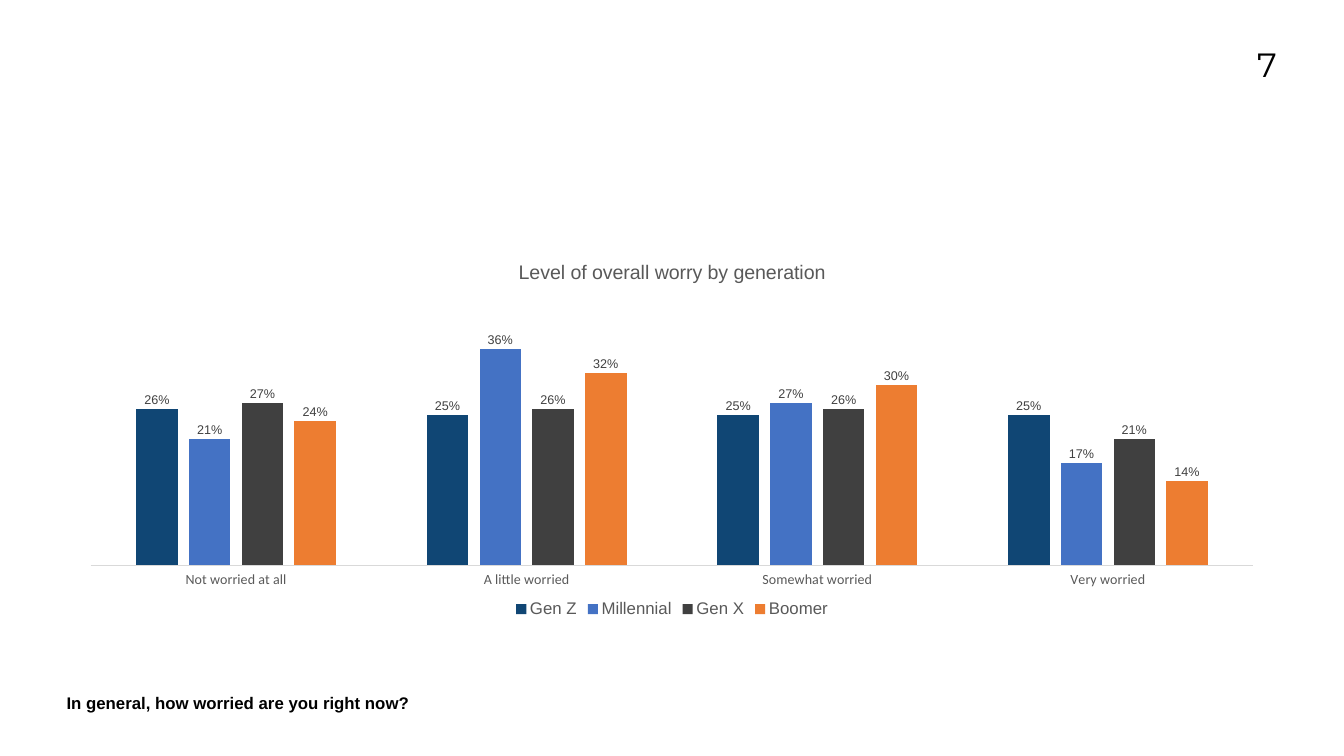
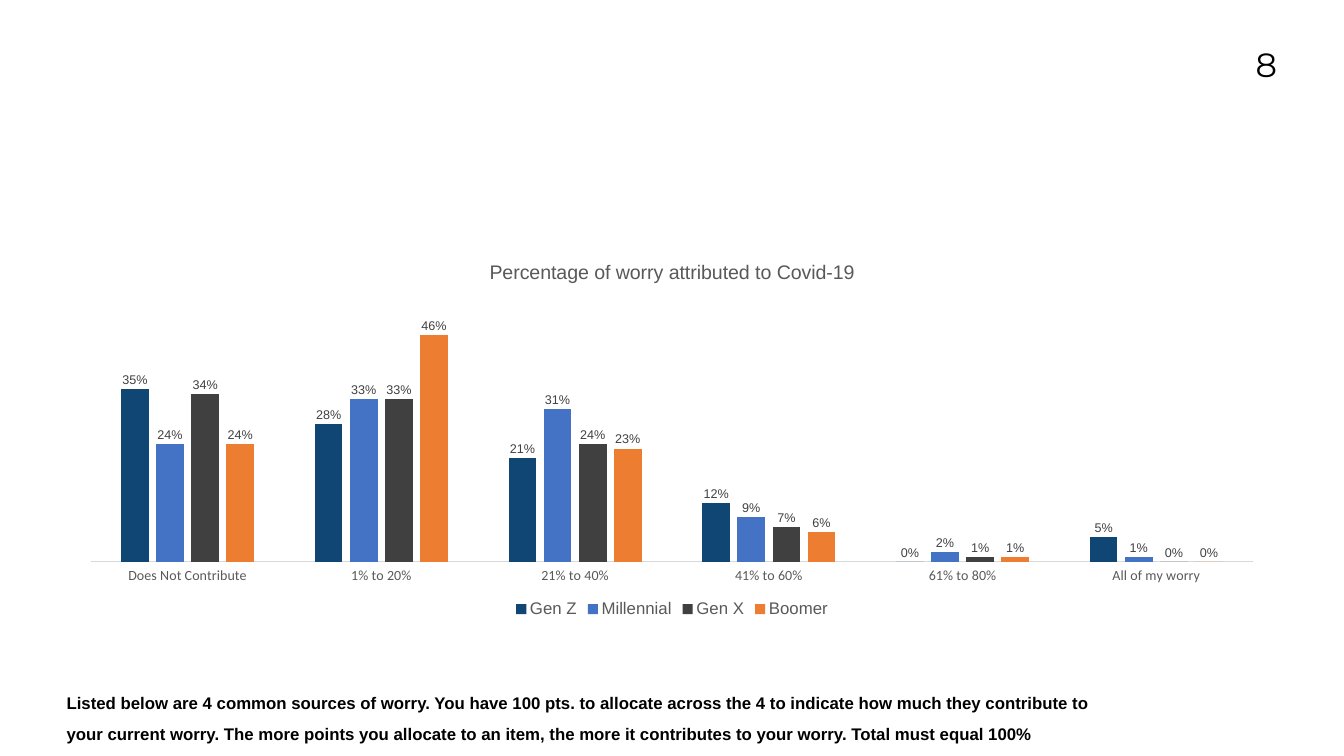
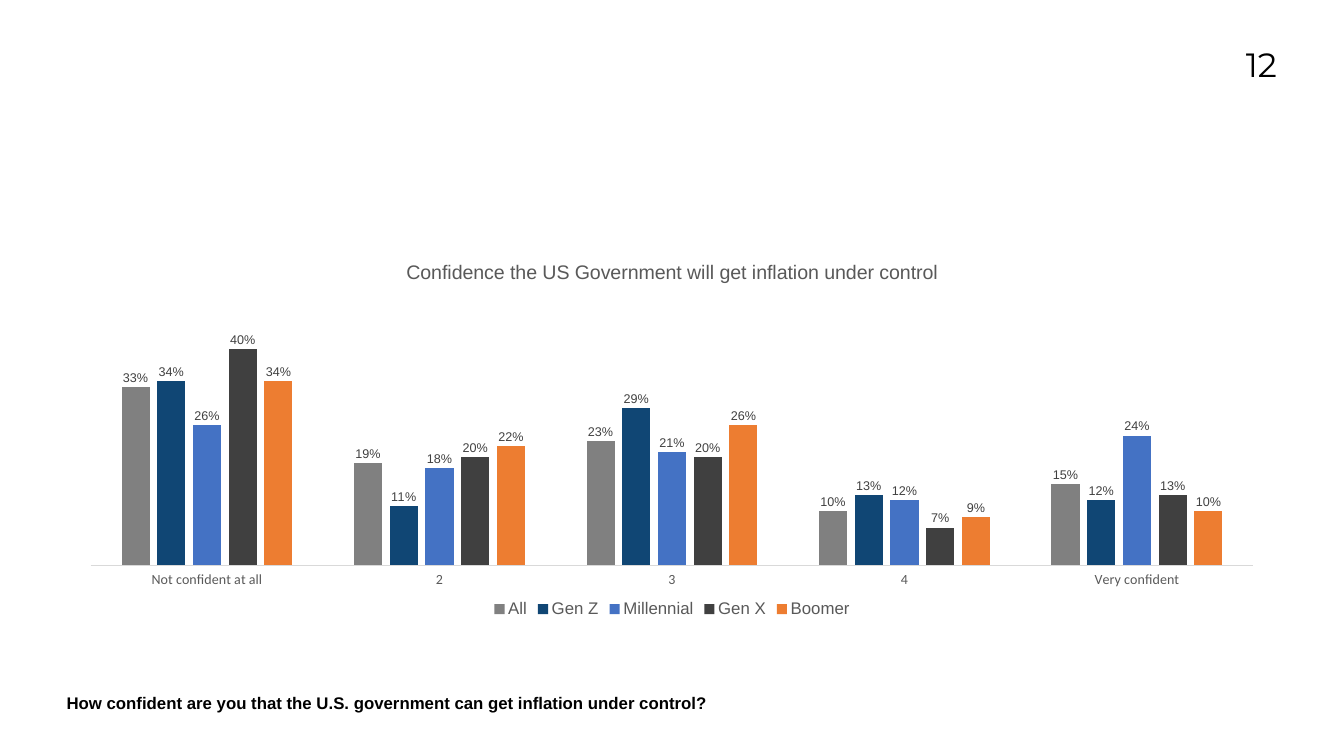
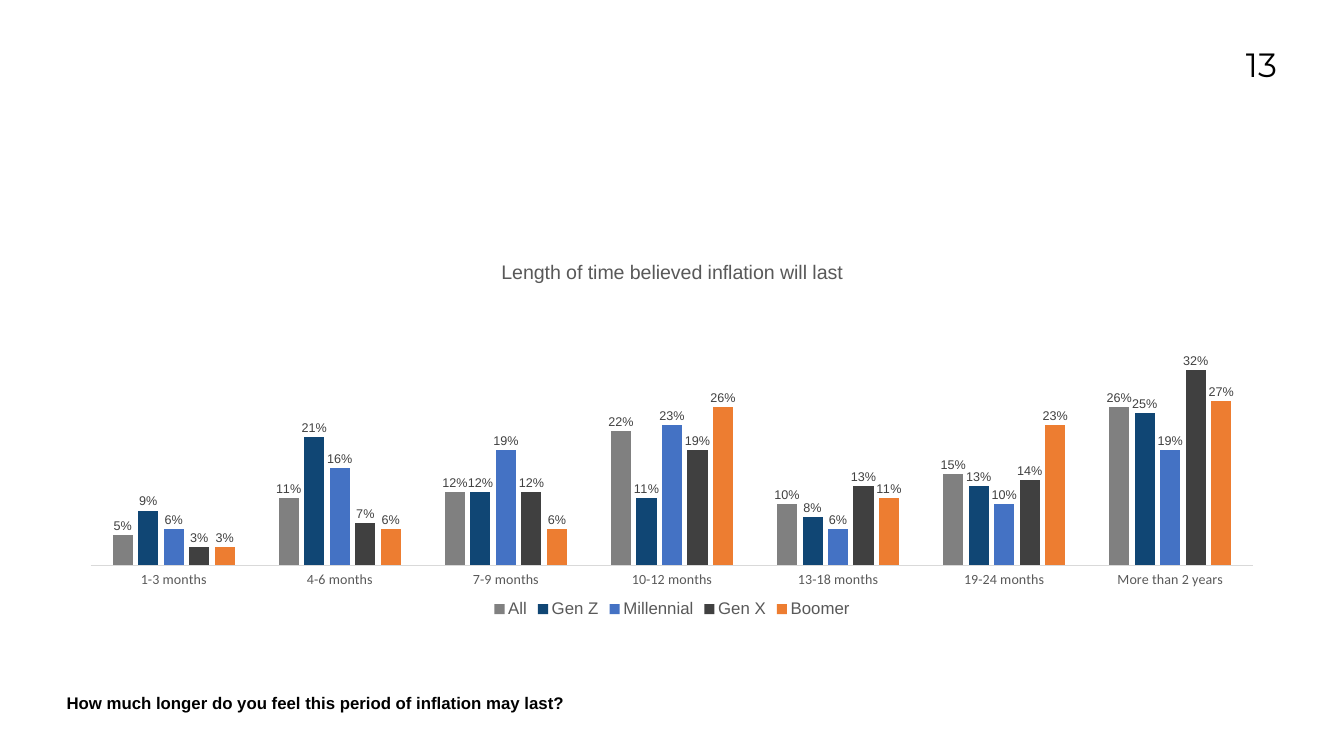
from lxml import etree
from pptx import Presentation
from pptx.chart.data import CategoryChartData
from pptx.dml.color import RGBColor
from pptx.enum.chart import (XL_CHART_TYPE, XL_LABEL_POSITION, XL_LEGEND_POSITION,
                             XL_TICK_LABEL_POSITION, XL_TICK_MARK)
from pptx.enum.text import PP_ALIGN
from pptx.oxml.ns import qn
from pptx.util import Inches, Pt

# Shared colours
BLACK = RGBColor(0x00, 0x00, 0x00)
CHART_TEXT = RGBColor(0x59, 0x59, 0x59)
LABEL_TEXT = RGBColor(0x40, 0x40, 0x40)
AXIS_LINE = RGBColor(0xD9, 0xD9, 0xD9)
GENERATION_COLORS = {
    "All": RGBColor(0x80, 0x80, 0x80),
    "Gen Z": RGBColor(0x10, 0x46, 0x74),
    "Millennial": RGBColor(0x44, 0x72, 0xC4),
    "Gen X": RGBColor(0x40, 0x40, 0x40),
    "Boomer": RGBColor(0xED, 0x7D, 0x31),
}

# Slide content; percentages are whole numbers, plot is (top, height) within the chart
SLIDES = [
    {
        "number": "7",
        "title": "Level of overall worry by generation",
        "question": "In general, how worried are you right now?",
        "question_width": 12.01,
        "axis_max": 0.45,
        "plot": (0.13, 0.72),
        "categories": ["Not worried at all", "A little worried", "Somewhat worried",
                       "Very worried"],
        "percents": {
            "Gen Z": (26, 25, 25, 25),
            "Millennial": (21, 36, 27, 17),
            "Gen X": (27, 26, 26, 21),
            "Boomer": (24, 32, 30, 14),
        },
    },
    {
        "number": "8",
        "title": "Percentage of worry attributed to Covid-19",
        "question": "Listed below are 4 common sources of worry. You have 100 pts. to allocate "
                    "across the 4 to indicate how much they contribute to your current worry. "
                    "The more points you allocate to an item, the more it contributes to your "
                    "worry. Total must equal 100%",
        "question_width": 20.87,
        "axis_max": 0.55,
        "plot": (0.12, 0.72),
        "categories": ["Does Not Contribute", "1% to 20%", "21% to 40%", "41% to 60%",
                       "61% to 80%", "All of my worry"],
        "percents": {
            "Gen Z": (35, 28, 21, 12, 0, 5),
            "Millennial": (24, 33, 31, 9, 2, 1),
            "Gen X": (34, 33, 24, 7, 1, 0),
            "Boomer": (24, 46, 23, 6, 1, 0),
        },
    },
    {
        "number": "12",
        "title": "Confidence the US Government will get inflation under control",
        "question": "How confident are you that the U.S. government can get inflation "
                    "under control?",
        "question_width": 13.27,
        "axis_max": 0.5,
        "plot": (0.13, 0.72),
        "categories": ["Not confident at all", "2", "3", "4", "Very confident"],
        "percents": {
            "All": (33, 19, 23, 10, 15),
            "Gen Z": (34, 11, 29, 13, 12),
            "Millennial": (26, 18, 21, 12, 24),
            "Gen X": (40, 20, 20, 7, 13),
            "Boomer": (34, 22, 26, 9, 10),
        },
    },
    {
        "number": "13",
        "title": "Length of time believed inflation will last",
        "question": "How much longer do you feel this period of inflation may last?",
        "question_width": 13.27,
        "axis_max": 0.45,
        "plot": (0.12, 0.73),
        "categories": ["1-3 months", "4-6 months", "7-9 months", "10-12 months",
                       "13-18 months", "19-24 months", "More than 2 years"],
        "percents": {
            "All": (5, 11, 12, 22, 10, 15, 26),
            "Gen Z": (9, 21, 12, 11, 8, 13, 25),
            "Millennial": (6, 16, 19, 23, 6, 10, 19),
            "Gen X": (3, 7, 12, 19, 13, 14, 32),
            "Boomer": (3, 6, 6, 26, 11, 23, 27),
        },
    },
]


def style_font(font, name, size, color, bold=False):
    font.name = name
    font.size = Pt(size)
    font.color.rgb = color
    font.bold = bold


def add_text(s, text, left, top, width, height):
    tf = s.shapes.add_textbox(Inches(left), Inches(top), Inches(width), Inches(height)).text_frame
    tf.word_wrap = True
    tf.margin_left = tf.margin_top = tf.margin_right = tf.margin_bottom = 0
    p = tf.paragraphs[0]
    r = p.add_run()
    r.text = text
    return p, r


prs = Presentation()
prs.slide_width = Inches(26.67)
prs.slide_height = Inches(15)

for content in SLIDES:
    s = prs.slides.add_slide(prs.slide_layouts[6])

    # Slide number
    p, r = add_text(s, content["number"], 23.09, 0.88, 2.25, 1.64)
    p.alignment = PP_ALIGN.RIGHT
    style_font(r.font, "Montserrat", 48, BLACK)

    # Chart
    data = CategoryChartData(number_format="0%")
    data.categories = content["categories"]
    for name, percents in content["percents"].items():
        data.add_series(name, [percent / 100 for percent in percents])
    chart = s.shapes.add_chart(XL_CHART_TYPE.COLUMN_CLUSTERED, Inches(1.32), Inches(4.88),
                               Inches(24.03), Inches(7.46), data).chart
    style_font(chart.font, "Calibri", 10, BLACK)

    # Chart title and legend
    chart.has_title = True
    r = chart.chart_title.text_frame.paragraphs[0].add_run()
    r.text = content["title"]
    style_font(r.font, "Arial", 28, CHART_TEXT)
    chart.chart_title.include_in_layout = False
    chart.has_legend = True
    chart.legend.position = XL_LEGEND_POSITION.BOTTOM
    chart.legend.include_in_layout = False
    style_font(chart.legend.font, "Arial", 24, CHART_TEXT)

    # Axes
    cat_axis = chart.category_axis
    cat_axis.major_tick_mark = XL_TICK_MARK.NONE
    cat_axis.tick_label_position = XL_TICK_LABEL_POSITION.LOW
    cat_axis.format.line.color.rgb = AXIS_LINE
    cat_axis.format.line.width = Pt(0.75)
    style_font(cat_axis.tick_labels.font, "Calibri", 20, CHART_TEXT)
    val_axis = chart.value_axis
    val_axis.visible = False
    val_axis.has_major_gridlines = False
    val_axis.minimum_scale = 0
    val_axis.maximum_scale = content["axis_max"]
    val_axis.tick_labels.number_format = "0%"
    val_axis.tick_labels.number_format_is_linked = False

    # Columns and their labels
    plot = chart.plots[0]
    plot.vary_by_categories = False
    plot.gap_width = 219
    plot.overlap = -27
    for series in plot.series:
        series.format.fill.solid()
        series.format.fill.fore_color.rgb = GENERATION_COLORS[series.name]
        labels = series.data_labels
        labels.show_value = True
        labels.position = XL_LABEL_POSITION.OUTSIDE_END
        labels.number_format = "0%"
        labels.number_format_is_linked = False
        style_font(labels.font, "Arial", 18, LABEL_TEXT)

    # Inner plot area as fractions of the chart
    plot_area = chart.element.find(".//" + qn("c:plotArea"))
    for layout in plot_area.findall(qn("c:layout")):
        plot_area.remove(layout)
    layout = etree.Element(qn("c:layout"))
    plot_area.insert(0, layout)
    manual = etree.SubElement(layout, qn("c:manualLayout"))
    top, height = content["plot"]
    for tag, value in (("layoutTarget", "inner"), ("xMode", "edge"), ("yMode", "edge"),
                       ("x", 0.02), ("y", top), ("w", 0.96), ("h", height)):
        etree.SubElement(manual, qn("c:" + tag)).set("val", str(value))

    # Survey question
    p, r = add_text(s, content["question"], 1.32, 13.55, content["question_width"], 0.65)
    p.line_spacing = 1.5
    style_font(r.font, "Arial", 24, BLACK, bold=True)

prs.save("out.pptx")
